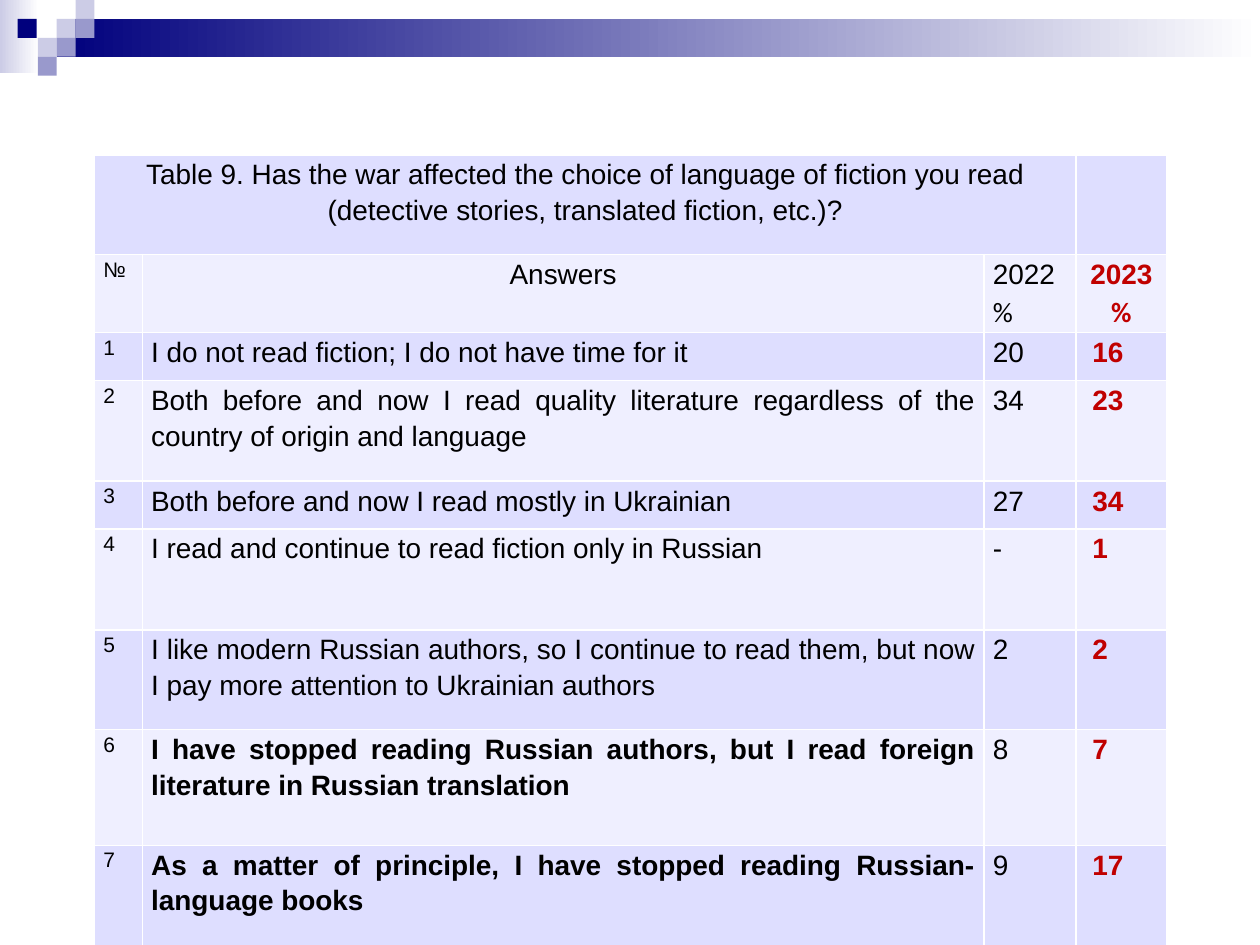
"""Build a survey table slide on the language of fiction people read."""
import dataclasses

import pptx
import pptx.dml.color
import pptx.enum.shapes
import pptx.enum.text
import pptx.oxml
import pptx.oxml.ns
import pptx.util

Inches = pptx.util.Inches
ALIGN = pptx.enum.text.PP_ALIGN


@dataclasses.dataclass(frozen=True)
class Theme:
    navy: str = "00007D"
    violet: str = "9999CC"
    lavender: str = "CCCCE6"
    white: str = "FFFFFF"
    black: str = "000000"
    red: str = "C00000"
    bands: tuple = ("DEDEFF", "EFEFFF")
    font: str = "Arial"
    percent_font: str = "Calibri"
    body_size: int = 16
    number_size: int = 12
    line_spacing: float = 1.15
    inset: float = 0.07
    figure_inset: float = 0.13


THEME = Theme()
COLUMN_WIDTHS = (0.38, 6.68, 0.73, 0.72)
ROW_HEIGHTS = (0.79, 0.62, 0.38, 0.8, 0.38, 0.8, 0.79, 0.92, 0.8)
TITLE = (
    "Table 9. Has the war affected the choice of language of fiction you read",
    "(detective stories, translated fiction, etc.)?",
)
ANSWERS = (
    ("I do not read fiction; I do not have time for it", "20", "16", False),
    ("Both before and now I read quality literature regardless of the country of origin and language",
     "34", "23", False),
    ("Both before and now I read mostly in Ukrainian", "27", "34", False),
    ("I read and continue to read fiction only in Russian", "-", "1", False),
    ("I like modern Russian authors, so I continue to read them, but now "
     "I pay more attention to Ukrainian authors", "2", "2", False),
    ("I have stopped reading Russian authors, but I read foreign literature in Russian translation",
     "8", "7", True),
    ("As a matter of principle, I have stopped reading Russian-language books", "9", "17", True),
)
SQUARES = (
    (0.45, 0.15, THEME.lavender), (0.6, 0, THEME.lavender), (0.6, 0.15, THEME.violet),
    (0.3, 0.3, THEME.lavender), (0.14, 0.15, THEME.navy), (0.45, 0.3, THEME.violet),
    (0.3, 0.45, THEME.violet),
)


def rgb(value):
    """Turn a hexadecimal string into a colour."""
    return pptx.dml.color.RGBColor.from_string(value)


def add_block(page, left, top, width, height, color, fade_to=None):
    """Add a rectangle with a plain fill or a fade from left to right."""
    block = page.shapes.add_shape(
        pptx.enum.shapes.MSO_SHAPE.RECTANGLE,
        Inches(left), Inches(top), Inches(width), Inches(height))
    block.shadow.inherit = False
    block.line.fill.background()
    if fade_to is None:
        block.fill.solid()
        block.fill.fore_color.rgb = rgb(color)
        return
    block.fill.gradient()
    block.fill.gradient_angle = 0
    for stop, shade, position in zip(block.fill.gradient_stops, (color, fade_to), (0, 1)):
        stop.color.rgb = rgb(shade)
        stop.position = position


def add_header_band(page):
    """Add the fading bars and the small squares along the top."""
    add_block(page, 0, 0, 0.31, 0.58, THEME.lavender, THEME.white)
    add_block(page, 0.45, 0.15, 9.55, 0.3, THEME.navy, THEME.white)
    for left, top, color in SQUARES:
        add_block(page, left, top, 0.15, 0.15, color)


def style_cell(cell, color):
    """Give a cell its fill, margins and thin white borders."""
    cell.margin_left = cell.margin_right = Inches(THEME.inset)
    cell.margin_top = cell.margin_bottom = 0
    cell.fill.solid()
    cell.fill.fore_color.rgb = rgb(color)
    properties = cell._tc.get_or_add_tcPr()
    for index, side in enumerate(("lnL", "lnR", "lnT", "lnB")):
        border = pptx.oxml.parse_xml(
            f'<a:{side} {pptx.oxml.ns.nsdecls("a")} w="{pptx.util.Pt(1)}"><a:solidFill>'
            f'<a:srgbClr val="{THEME.white}"/></a:solidFill></a:{side}>')
        properties.insert(index, border)


def write_cell(cell, lines, align=ALIGN.JUSTIFY, size=THEME.body_size,
               color=THEME.black, bold=False):
    """Write one paragraph per line, with percent signs in their own font."""
    frame = cell.text_frame
    for index, line in enumerate(lines):
        para = frame.add_paragraph() if index else frame.paragraphs[0]
        para.alignment = align
        para.line_spacing = THEME.line_spacing
        span = para.add_run()
        span.text = line
        span.font.name = THEME.percent_font if line == "%" else THEME.font
        span.font.size = pptx.util.Pt(size)
        span.font.bold = bold
        span.font.color.rgb = rgb(color)


def add_table(page):
    """Add the empty survey table with banded rows."""
    table = page.shapes.add_table(
        len(ROW_HEIGHTS), len(COLUMN_WIDTHS), Inches(0.75), Inches(1.23),
        Inches(sum(COLUMN_WIDTHS)), Inches(sum(ROW_HEIGHTS))).table
    table.first_row = table.horz_banding = False
    for column, width in zip(table.columns, COLUMN_WIDTHS):
        column.width = Inches(width)
    for index, (row, height) in enumerate(zip(table.rows, ROW_HEIGHTS)):
        row.height = Inches(height)
        for cell in row.cells:
            style_cell(cell, THEME.bands[index % 2])
    return table


def fill_table(table):
    """Write the title, the column heads and the numbered answers."""
    table.cell(0, 0).merge(table.cell(0, 2))
    write_cell(table.cell(0, 0), TITLE, ALIGN.CENTER)
    write_cell(table.cell(1, 0), ["№"], size=THEME.number_size)
    write_cell(table.cell(1, 1), ["Answers"], ALIGN.CENTER)
    write_cell(table.cell(1, 2), ["2022", "%"])
    write_cell(table.cell(1, 3), ["2023", "%"], ALIGN.CENTER, color=THEME.red, bold=True)
    for number, (answer, earlier, later, bold) in enumerate(ANSWERS, 1):
        cells = table.rows[number + 1].cells
        write_cell(cells[0], [str(number)], size=THEME.number_size)
        write_cell(cells[1], [answer], bold=bold)
        write_cell(cells[2], [earlier])
        write_cell(cells[3], [later], color=THEME.red, bold=True)
        cells[3].margin_left = Inches(THEME.figure_inset)


def main():
    """Build the deck and save it."""
    deck = pptx.Presentation()
    deck.slide_width, deck.slide_height = Inches(10), Inches(7.5)
    page = deck.slides.add_slide(deck.slide_layouts[6])
    add_header_band(page)
    fill_table(add_table(page))
    deck.save("out.pptx")


if __name__ == "__main__":
    main()
